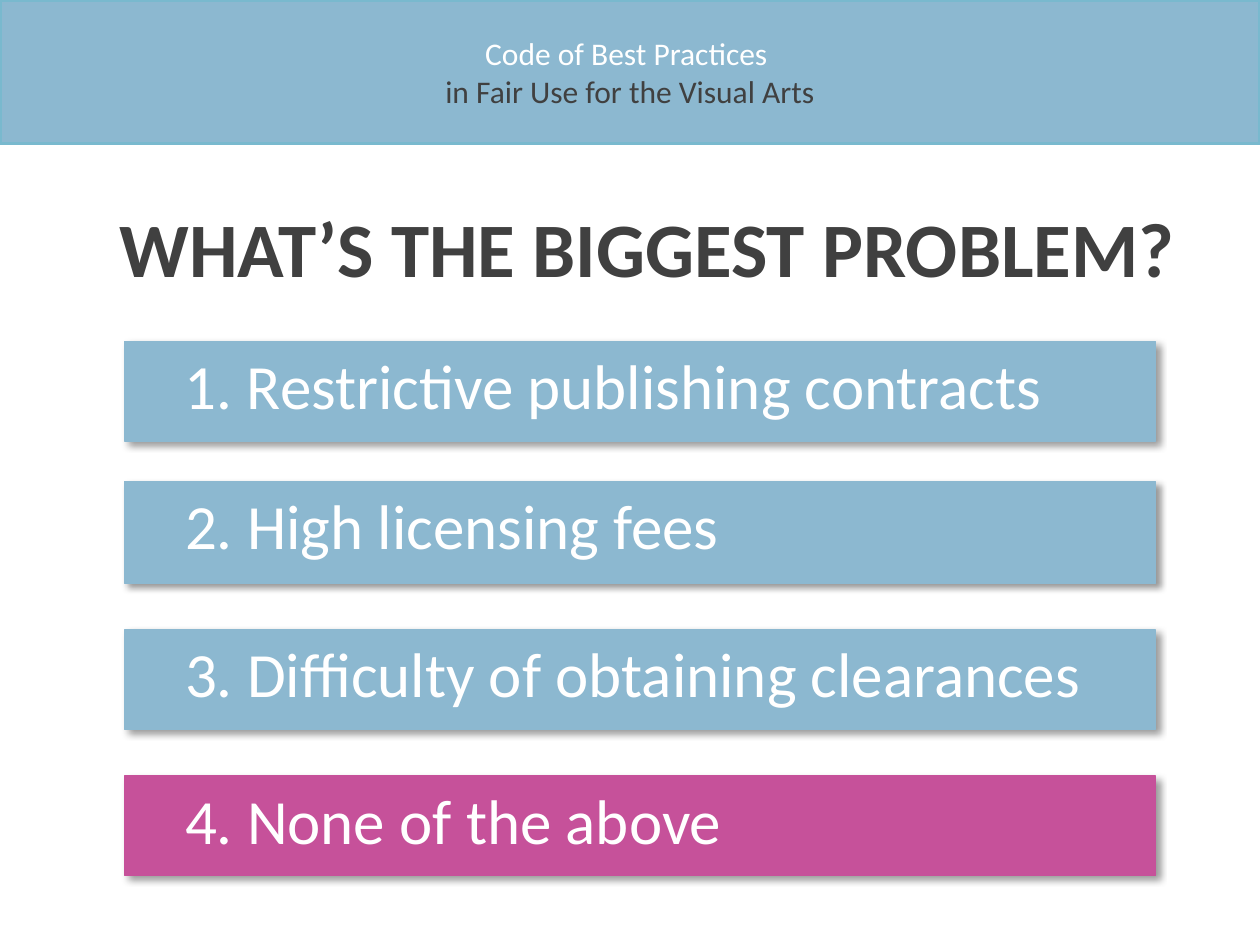
from lxml import etree
from pptx import Presentation
from pptx.dml.color import RGBColor
from pptx.enum import shapes, text
from pptx.oxml.ns import qn
from pptx.util import Inches, Pt

BLUE = RGBColor(0x8C, 0xB8, 0xD0)
TEAL = RGBColor(0x79, 0xB9, 0xCE)
PINK = RGBColor(0xC6, 0x51, 0x9A)
DARK = RGBColor(0x40, 0x40, 0x40)
WHITE = RGBColor(0xFF, 0xFF, 0xFF)
FONT = "Calibri"

ANSWERS = [  # top, bar height, text width, bar colour, wording
    (2.71, 0.79, 7.27, BLUE, "1. Restrictive publishing contracts"),
    (3.82, 0.81, 6.38, BLUE, "2. High licensing fees"),
    (5.00, 0.79, 7.42, BLUE, "3. Difficulty of obtaining clearances"),
    (6.16, 0.79, 5.91, PINK, "4. None of the above"),
]


def style(p, size, color, align, bold=False):
    p.alignment = align
    p.font.name, p.font.size, p.font.bold = FONT, Pt(size), bold
    p.font.color.rgb = color


def add_bar(slide, box, fill, line, width):
    sp = slide.shapes.add_shape(shapes.MSO_SHAPE.RECTANGLE, *map(Inches, box))
    sp.shadow.inherit = False
    sp.fill.solid()
    sp.fill.fore_color.rgb = fill
    sp.line.color.rgb = line
    sp.line.width = Pt(width)
    return sp


def add_shadow(sp):
    """Cast a soft black shadow to the lower right."""
    effects = sp._element.spPr.find(qn("a:effectLst"))
    shadow = etree.SubElement(
        effects, qn("a:outerShdw"), blurRad=str(Pt(4)), dist=str(Pt(3)),
        dir=str(45 * 60000), algn="tl", rotWithShape="0")
    color = etree.SubElement(shadow, qn("a:srgbClr"), val="000000")
    etree.SubElement(color, qn("a:alpha"), val="40000")


def add_header(slide, box):
    tf = add_bar(slide, box, BLUE, TEAL, 2).text_frame
    tf.vertical_anchor = text.MSO_ANCHOR.MIDDLE
    tf.text = "Code of Best Practices \nin Fair Use for the Visual Arts"
    for p, color in zip(tf.paragraphs, (WHITE, DARK)):
        style(p, 18, color, text.PP_ALIGN.CENTER)


def set_title(slide, box):
    title = slide.shapes.title
    title.left, title.top, title.width, title.height = map(Inches, box)
    tf = title.text_frame
    tf.text = "WHAT’S THE BIGGEST PROBLEM?"
    tf.word_wrap = False
    tf.auto_size = text.MSO_AUTO_SIZE.NONE
    tf.vertical_anchor = text.MSO_ANCHOR.TOP
    style(tf.paragraphs[0], 44, DARK, text.PP_ALIGN.CENTER, bold=True)


def add_answer(slide, box, color, wording, text_width):
    left, top, _, _ = box
    add_shadow(add_bar(slide, box, color, color, 0.75))
    label = slide.shapes.add_textbox(
        Inches(left + 0.38), Inches(top - 0.01), Inches(text_width), Inches(0.71))
    tf = label.text_frame
    tf.word_wrap = True
    tf.text = wording
    style(tf.paragraphs[0], 36, WHITE, text.PP_ALIGN.LEFT)


def main():
    prs = Presentation()
    prs.slide_width, prs.slide_height = Inches(10), Inches(7.5)
    slide = prs.slides.add_slide(prs.slide_layouts.get_by_name("Title Only"))
    add_header(slide, (0, 0, 10, 1.14))
    set_title(slide, (0.78, 1.54, 8.72, 0.84))
    for top, height, text_width, color, wording in ANSWERS:
        add_answer(slide, (0.99, top, 8.18, height), color, wording, text_width)
    prs.save("out.pptx")


if __name__ == "__main__":
    main()
